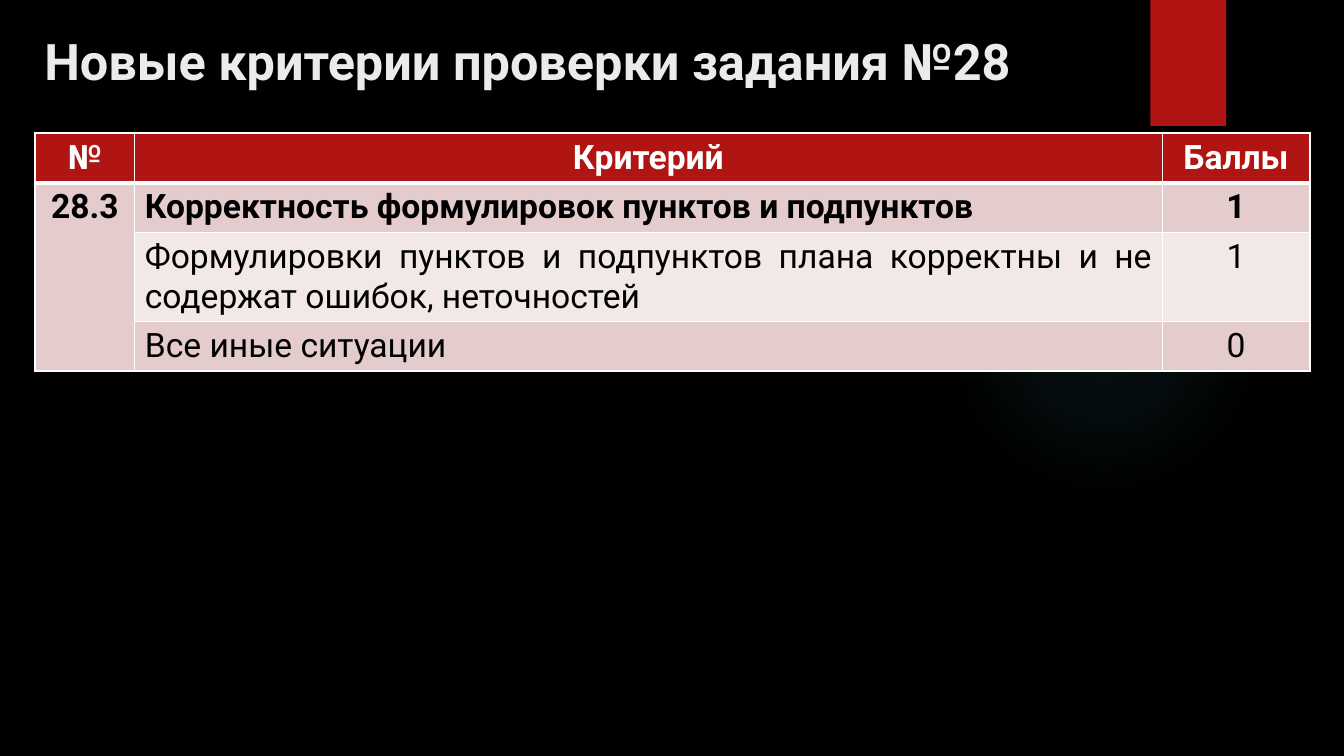
from lxml.etree import SubElement
from pptx import Presentation
from pptx.dml.color import RGBColor
from pptx.enum.shapes import MSO_SHAPE as Preset
from pptx.enum.text import MSO_ANCHOR as Anchor, PP_ALIGN as Align
from pptx.oxml.ns import qn
from pptx.util import Inches, Pt

COLORS = {
    "background": "000000",
    "accent": "B01513",
    "glow": "50B9C1",
    "title": "EBEBEB",
    "white": "FFFFFF",
    "ink": "000000",
    "band_dark": "E4CCCC",
    "band_light": "F2E8E7",
}
FONT = "Roboto"


def rgb(name):
    return RGBColor.from_string(COLORS[name])


class CriteriaSlide:
    def __init__(self, deck):
        self.width, self.height = deck.slide_width, deck.slide_height
        self.slide = deck.slides.add_slide(deck.slide_layouts[5])
        fill = self.slide.background.fill
        fill.solid()
        fill.fore_color.rgb = rgb("background")

    def across(self, percent):
        return round(self.width * percent / 100)

    def down(self, percent):
        return round(self.height * percent / 100)

    def box(self, left, top, width, height):
        return self.across(left), self.down(top), self.across(width), self.down(height)

    def set_text(self, frame, text, size, color, bold=True, align=Align.LEFT):
        frame.text = text
        paragraph = frame.paragraphs[0]
        paragraph.alignment = align
        font = paragraph.runs[0].font
        font.name, font.size, font.bold = FONT, Pt(size), bold
        font.color.rgb = rgb(color)

    def title(self, text, *place):
        heading = self.slide.shapes.title
        heading.left, heading.top, heading.width, heading.height = self.box(*place)
        frame = heading.text_frame
        frame.word_wrap = True
        frame.vertical_anchor = Anchor.MIDDLE
        self.set_text(frame, text, 36, "title")

    def shape(self, preset, color, *place):
        figure = self.slide.shapes.add_shape(preset, *self.box(*place))
        figure.shadow.inherit = False
        figure.fill.solid()
        figure.fill.fore_color.rgb = rgb(color)
        figure.line.fill.background()
        return figure

    def glow(self, color, stops, *place):
        halo = self.shape(Preset.OVAL, color, *place)
        properties = halo._element.spPr
        solid = properties.find(qn("a:solidFill"))
        gradient = SubElement(properties, qn("a:gradFill"), rotWithShape="1")
        properties.replace(solid, gradient)
        stop_list = SubElement(gradient, qn("a:gsLst"))
        for position, opacity in stops:
            stop = SubElement(stop_list, qn("a:gs"), pos=str(position * 1000))
            tint = SubElement(stop, qn("a:srgbClr"), val=COLORS[color])
            SubElement(tint, qn("a:alpha"), val=str(opacity * 1000))
        radial = SubElement(gradient, qn("a:path"), path="circle")
        SubElement(radial, qn("a:fillToRect"), l="50000", t="50000", r="50000", b="50000")

    def borders(self, cell, **widths):
        properties = cell._tc.get_or_add_tcPr()
        for side in "LRTB":
            line = SubElement(properties, qn(f"a:ln{side}"), w=str(Pt(widths.get(side, 1))))
            paint = SubElement(line, qn("a:solidFill"))
            SubElement(paint, qn("a:srgbClr"), val=COLORS["white"])

    def table(self, rows, left, top, widths, heights):
        place = self.box(left, top, sum(widths), sum(heights))
        grid = self.slide.shapes.add_table(len(rows), len(widths), *place).table
        for column, width in zip(grid.columns, widths):
            column.width = self.across(width)
        for row, height in zip(grid.rows, heights):
            row.height = self.down(height)
        grid.cell(1, 0).merge(grid.cell(len(rows) - 1, 0))
        for r, texts in enumerate(rows):
            header = r == 0
            band = "accent" if header else "band_dark" if r % 2 else "band_light"
            for c, text in enumerate(texts):
                cell = grid.cell(r, c)
                self.borders(cell, B=3 if header else 1, T=3 if r == 1 else 1)
                cell.fill.solid()
                cell.fill.fore_color.rgb = rgb(band)
                if text:
                    align = Align.JUSTIFY if c == 1 and not header else Align.CENTER
                    color = "white" if header else "ink"
                    self.set_text(cell.text_frame, text, 24, color, r < 2, align)


def main():
    deck = Presentation()
    deck.slide_width, deck.slide_height = Inches(13.33), Inches(7.5)
    page = CriteriaSlide(deck)
    page.glow("glow", [(0, 7), (36, 6), (69, 0), (100, 0)], 70.6, 24.4, 23.1, 41.07)
    page.shape(Preset.RECTANGLE, "accent", 85.6, 0, 5.63, 16.67)
    page.title("Новые критерии проверки задания №28", 2.55, 2.93, 82.9, 10)
    criteria = [
        ("№", "Критерий", "Баллы"),
        ("28.3", "Корректность формулировок пунктов и подпунктов", "1"),
        ("", "Формулировки пунктов и подпунктов плана корректны и не "
             "содержат ошибок, неточностей", "1"),
        ("", "Все иные ситуации", "0"),
    ]
    page.table(criteria, 2.6, 17.6, (7.43, 76.44, 11), (6.55, 6.55, 11.8, 6.55))
    deck.save("out.pptx")


if __name__ == "__main__":
    main()
